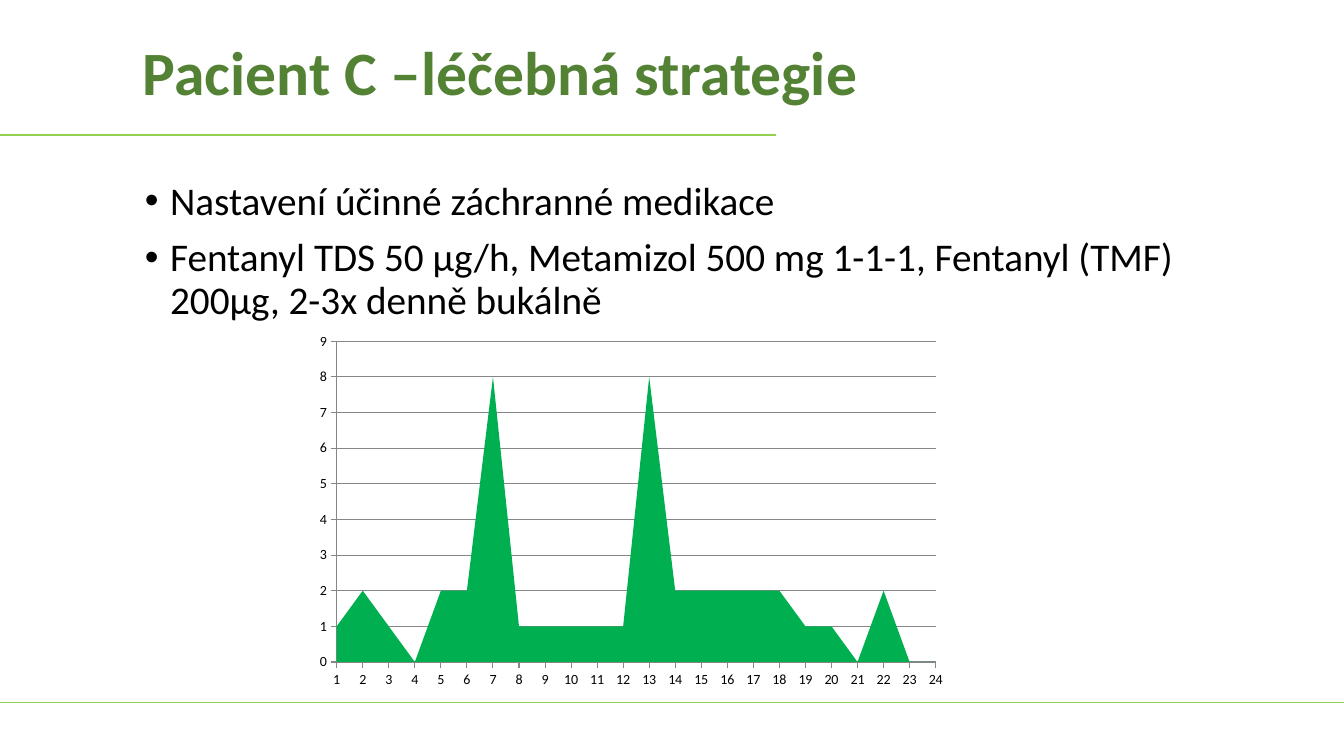
from lxml import etree
from pptx import Presentation
from pptx.chart.data import CategoryChartData
from pptx.dml.color import RGBColor
from pptx.enum.chart import XL_CHART_TYPE as ChartType, XL_TICK_MARK as Tick
from pptx.enum.shapes import MSO_CONNECTOR as Connector
from pptx.enum.text import MSO_ANCHOR as Anchor
from pptx.oxml import parse_xml
from pptx.oxml.ns import nsdecls, qn
from pptx.util import Cm, Pt

WIDTH, HEIGHT = 33.87, 19.05


def color(hex_code):
    return RGBColor.from_string(hex_code)


class SlideBuilder:
    font = "Calibri"
    title_color = "548235"
    text_color = "000000"
    rule_color = "92D050"
    area_color = "00B050"
    axis_color = "868686"

    def __init__(self, slide):
        self.slide = slide

    def text(self, x, y, w, h, paragraphs, size, hex_code,
             bold=False, bullet=False, anchor=Anchor.TOP):
        sp = self.slide.shapes.add_textbox(Cm(x), Cm(y), Cm(w), Cm(h))
        tf = sp.text_frame
        tf.word_wrap = True
        tf.vertical_anchor = anchor
        for i, content in enumerate(paragraphs):
            p = tf.add_paragraph() if i else tf.paragraphs[0]
            p.line_spacing = 0.9
            if bullet:
                p.space_before = Pt(10)
                self.bullet(p)
            r = p.add_run()
            r.text = content
            r.font.name = self.font
            r.font.size = Pt(size)
            r.font.bold = bold
            r.font.color.rgb = color(hex_code)

    def bullet(self, p):
        pPr = p._p.get_or_add_pPr()
        indent = Cm(0.64)
        pPr.set("marL", str(indent))
        pPr.set("indent", str(-indent))
        etree.SubElement(pPr, qn("a:buFont")).set("typeface", "Arial")
        etree.SubElement(pPr, qn("a:buChar")).set("char", "•")

    def rule(self, y, length, weight):
        line = self.slide.shapes.add_connector(
            Connector.STRAIGHT, Cm(0), Cm(y), Cm(length), Cm(y))
        line.line.color.rgb = color(self.rule_color)
        line.line.width = Pt(weight)
        etree.SubElement(line._element.spPr, qn("a:effectLst"))

    def area_chart(self, x, y, w, h, name, values, plot_box):
        data = CategoryChartData()
        data.categories = [str(n) for n in range(1, len(values) + 1)]
        data.add_series(name, values)
        chart = self.slide.shapes.add_chart(
            ChartType.AREA, Cm(x), Cm(y), Cm(w), Cm(h), data).chart
        chart.has_legend = False
        chart.has_title = False
        chart.font.name = self.font
        chart.font.size = Pt(10)
        chart.font.color.rgb = color(self.text_color)

        fill = chart.plots[0].series[0].format.fill
        fill.solid()
        fill.fore_color.rgb = color(self.area_color)

        value_axis = chart.value_axis
        value_axis.minimum_scale, value_axis.maximum_scale = 0, 9
        value_axis.major_unit = 1
        value_axis.has_major_gridlines = True
        for axis in (chart.category_axis, value_axis):
            axis.major_tick_mark = Tick.OUTSIDE
            axis.minor_tick_mark = Tick.NONE
        for part in (chart.category_axis, value_axis, value_axis.major_gridlines):
            part.format.line.color.rgb = color(self.axis_color)
            part.format.line.width = Pt(0.75)

        # The area starts on the value axis
        for cross in chart._chartSpace.iter(qn("c:crossBetween")):
            cross.set("val", "midCat")
        self.plot_layout(chart, plot_box)

    def plot_layout(self, chart, plot_box):
        plot_area = chart._chartSpace.find(".//" + qn("c:plotArea"))
        for old in plot_area.findall(qn("c:layout")):
            plot_area.remove(old)
        settings = [("layoutTarget", "inner"), ("xMode", "edge"), ("yMode", "edge")]
        settings += zip("xywh", plot_box)
        inner = "".join(f'<c:{tag} val="{val}"/>' for tag, val in settings)
        plot_area.insert(0, parse_xml(
            f'<c:layout {nsdecls("c")}><c:manualLayout>{inner}'
            "</c:manualLayout></c:layout>"))


def main():
    prs = Presentation()
    prs.slide_width, prs.slide_height = Cm(WIDTH), Cm(HEIGHT)
    s = SlideBuilder(prs.slides.add_slide(prs.slide_layouts[6]))

    # Title
    s.text(3.35, 0.66, 29.21, 2.49, ["Pacient C –léčebná strategie"],
           44, s.title_color, bold=True, anchor=Anchor.MIDDLE)

    # Treatment points
    s.text(3.4, 4.45, 29.21, 12.6, [
        "Nastavení účinné záchranné medikace",
        "Fentanyl TDS 50 μg/h, Metamizol 500 mg 1-1-1, "
        "Fentanyl (TMF) 200μg, 2-3x denně bukálně",
    ], 28, s.text_color, bullet=True)

    # Footer and title rules
    s.rule(17.7, WIDTH, 1)
    s.rule(3.4, 19.56, 2)

    # Hourly values over one day
    hourly = [1, 2, 1, 0, 2, 2, 8, 1, 1, 1, 1, 1,
              8, 2, 2, 2, 2, 2, 1, 1, 0, 2, 0, 0]
    s.area_chart(7.49, 8.13, 16.59, 9.4, "Series 1", hourly,
                 (0.06, 0.05, 0.91, 0.86))

    prs.save("out.pptx")


if __name__ == "__main__":
    main()
